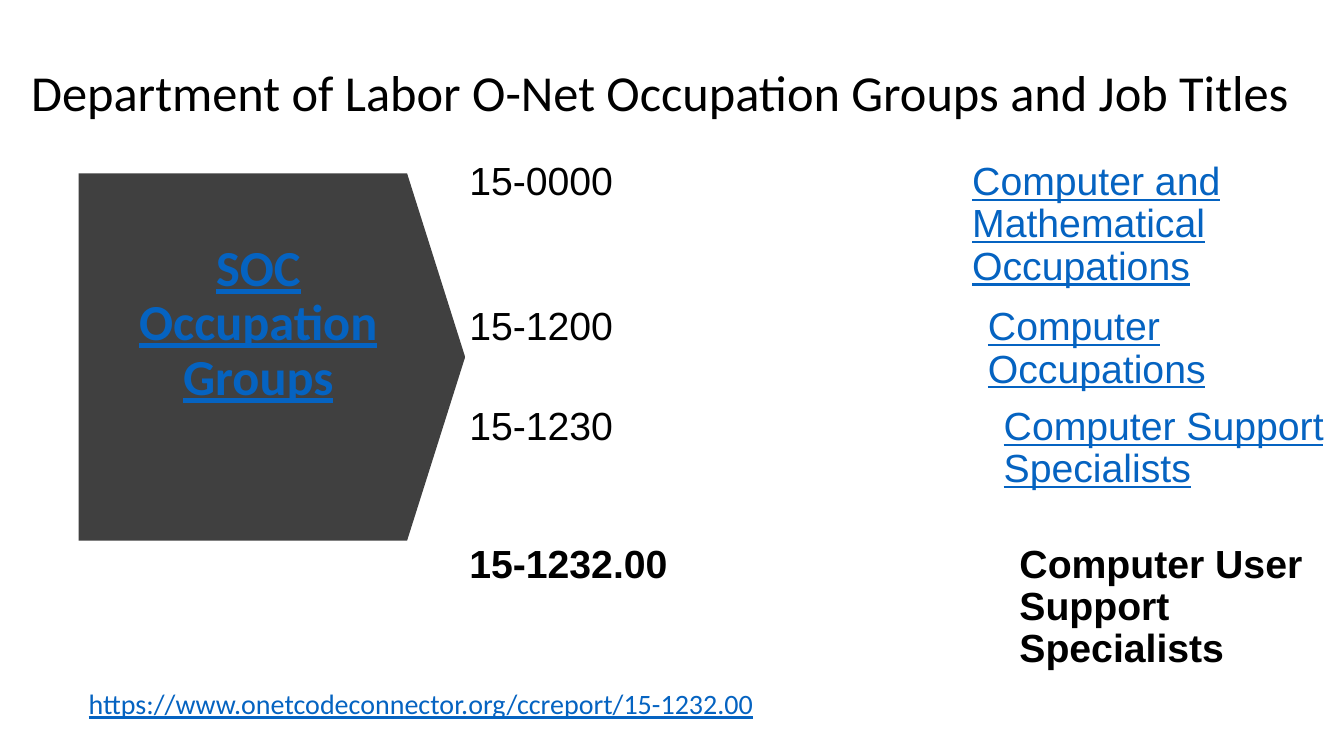
from dataclasses import dataclass

from pptx import Presentation
from pptx.dml.color import RGBColor
from pptx.enum.shapes import MSO_SHAPE
from pptx.enum.text import MSO_ANCHOR, MSO_AUTO_SIZE, PP_ALIGN
from pptx.util import Emu, Pt


@dataclass(frozen=True)
class Theme:
    """Colours, fonts and type sizes of the slide."""

    text: RGBColor = RGBColor(0x00, 0x00, 0x00)
    link: RGBColor = RGBColor(0x05, 0x63, 0xC1)
    arrow: RGBColor = RGBColor(0x40, 0x40, 0x40)
    main_font: str = "Calibri"
    table_font: str = "Arial"
    heading_size: Pt = Pt(36)
    table_size: Pt = Pt(28)
    source_size: Pt = Pt(20)


THEME = Theme()
EMU_PER_PX = 9525
CELL_MARGIN = 4
LEVEL_INDENT = 15
COLUMN_WIDTHS = (479, 365)
GROUPS = (
    ("15-0000", "Computer and Mathematical Occupations", 133),
    ("15-1200", "Computer Occupations", 91),
    ("15-1230", "Computer Support Specialists", 131),
    ("15-1232.00", "Computer User Support Specialists", 218),
)


def px(length):
    """Turn a length in px into EMU."""
    return Emu(length * EMU_PER_PX)


def box(left, top, width, height):
    """Turn a frame in px into EMU."""
    return px(left), px(top), px(width), px(height)


def write(frame, text, size, font_name, bold=False, link=False):
    """Fill a text frame with one formatted paragraph and return it."""
    frame.word_wrap = True
    paragraph = frame.paragraphs[0]
    paragraph.text = text
    font = paragraph.font
    font.name = font_name
    font.size = size
    font.bold = bold
    font.underline = link
    font.color.rgb = THEME.link if link else THEME.text
    return paragraph


def add_title(slide, text):
    """Place the slide title at the top left."""
    title = slide.shapes.title
    title.left, title.top, title.width, title.height = box(20, 53, 1369, 68)
    frame = title.text_frame
    frame.auto_size = MSO_AUTO_SIZE.NONE
    frame.vertical_anchor = MSO_ANCHOR.TOP
    paragraph = write(frame, text, THEME.heading_size, THEME.main_font)
    paragraph.alignment = PP_ALIGN.LEFT


def add_arrow(slide):
    """Draw the dark arrow that points at the table."""
    arrow = slide.shapes.add_shape(MSO_SHAPE.DOWN_ARROW, *box(84, 156, 350, 368))
    arrow.rotation = 270
    arrow.adjustments[0] = 1
    arrow.adjustments[1] = 0.158
    arrow.shadow.inherit = False
    arrow.fill.solid()
    arrow.fill.fore_color.rgb = THEME.arrow
    arrow.line.fill.background()


def add_arrow_label(slide, text):
    """Write the linked label over the arrow."""
    frame = slide.shapes.add_textbox(*box(108, 206, 276, 268)).text_frame
    frame.vertical_anchor = MSO_ANCHOR.MIDDLE
    frame.margin_bottom = px(67)
    paragraph = write(frame, text, THEME.heading_size, THEME.main_font, bold=True, link=True)
    paragraph.alignment = PP_ALIGN.CENTER
    paragraph.line_spacing = 0.9


def fill_cell(cell, text, level, bold, link):
    """Write a plain table cell, indented by its level."""
    cell.fill.background()
    cell.margin_left = px(CELL_MARGIN + LEVEL_INDENT * level)
    cell.margin_right = cell.margin_top = cell.margin_bottom = px(CELL_MARGIN)
    paragraph = write(cell.text_frame, text, THEME.table_size, THEME.table_font, bold, link)
    paragraph.line_spacing = 0.97


def add_group_table(slide):
    """List the group codes and their titles, each a level deeper."""
    heights = [height for _, _, height in GROUPS]
    frame = box(443, 150, sum(COLUMN_WIDTHS), sum(heights))
    table = slide.shapes.add_table(len(GROUPS), len(COLUMN_WIDTHS), *frame).table
    table.first_row = False
    table.horz_banding = False
    for column, width in zip(table.columns, COLUMN_WIDTHS):
        column.width = px(width)
    for level, (code, name, height) in enumerate(GROUPS):
        table.rows[level].height = px(height)
        is_job = level == len(GROUPS) - 1
        fill_cell(table.cell(level, 0), code, 0, is_job, False)
        fill_cell(table.cell(level, 1), name, level, is_job, not is_job)


def add_source(slide, address):
    """Write the source address at the bottom."""
    frame = slide.shapes.add_textbox(*box(75, 649, 1131, 74)).text_frame
    write(frame, address, THEME.source_size, THEME.main_font, link=True)


def main():
    """Build the slide and save it."""
    presentation = Presentation()
    presentation.slide_width = px(1280)
    presentation.slide_height = px(720)
    slide = presentation.slides.add_slide(presentation.slide_layouts.get_by_name("Title Only"))
    add_title(slide, "Department of Labor O-Net Occupation Groups and Job Titles")
    add_arrow(slide)
    add_arrow_label(slide, "SOC Occupation Groups")
    add_group_table(slide)
    add_source(slide, "https://www.onetcodeconnector.org/ccreport/15-1232.00")
    presentation.save("out.pptx")


if __name__ == "__main__":
    main()
